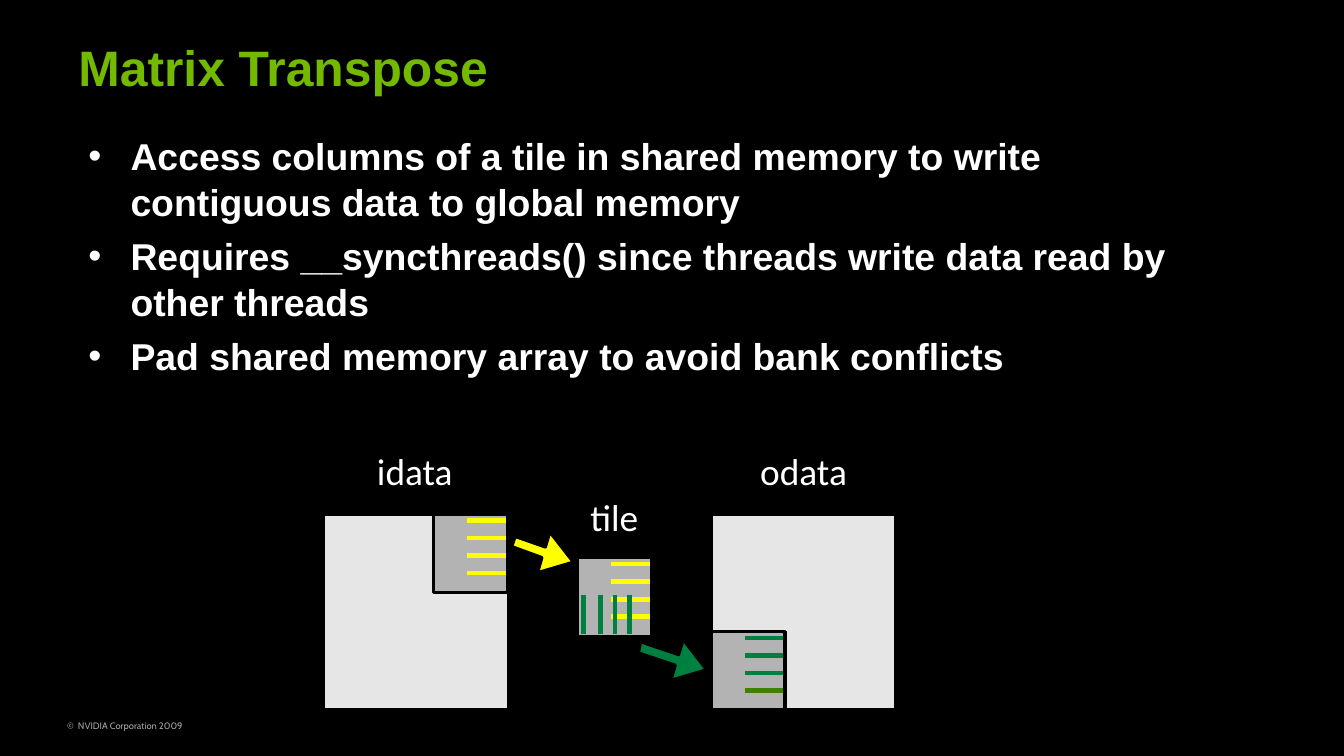
from dataclasses import dataclass

from lxml.etree import SubElement
from pptx import Presentation
from pptx.dml.color import RGBColor
from pptx.enum.shapes import MSO_CONNECTOR, MSO_SHAPE
from pptx.enum.text import MSO_ANCHOR, MSO_AUTO_SIZE, PP_ALIGN
from pptx.oxml.ns import qn
from pptx.util import Pt


@dataclass(frozen=True)
class Theme:
    background: RGBColor = RGBColor.from_string("000000")
    title: RGBColor = RGBColor.from_string("73B900")
    text: RGBColor = RGBColor.from_string("FFFFFF")
    footer: RGBColor = RGBColor.from_string("A6A6A6")
    matrix: RGBColor = RGBColor.from_string("E6E6E6")
    tile: RGBColor = RGBColor.from_string("B3B3B3")
    yellow: RGBColor = RGBColor.from_string("FFFF00")
    green: RGBColor = RGBColor.from_string("008040")
    olive: RGBColor = RGBColor.from_string("408000")
    title_size: int = 32
    text_size: int = 24
    footer_size: int = 6
    outline: int = 2
    stripe: int = 3


theme = Theme()
deck = Presentation()
deck.slide_width, deck.slide_height = Pt(864), Pt(486)
slide = deck.slides.add_slide(deck.slide_layouts[1])
slide.background.fill.solid()
slide.background.fill.fore_color.rgb = theme.background
shapes = slide.shapes


def fill_text(box, bounds, lines, insets, frame_format, para_format, font_format, color):
    box.left, box.top, box.width, box.height = [Pt(value) for value in bounds]
    frame = box.text_frame
    sides = ("margin_left", "margin_top", "margin_right", "margin_bottom")
    frame_values = {"word_wrap": True, "auto_size": MSO_AUTO_SIZE.NONE}
    frame_values |= dict(zip(sides, [Pt(value) for value in insets])) | frame_format
    for name, value in frame_values.items():
        setattr(frame, name, value)
    for index, line in enumerate(lines):
        para = frame.paragraphs[0] if index == 0 else frame.add_paragraph()
        for name, value in para_format.items():
            setattr(para, name, value)
        para.space_before = Pt(5.5 if index else 0)
        span = para.add_run()
        span.text = line
        for name, value in font_format.items():
            setattr(span.font, name, value)
        span.font.color.rgb = color


def style_shape(shape, color):
    shape.shadow.inherit = False
    shape.fill.solid()
    shape.fill.fore_color.rgb = color
    shape.line.color.rgb = theme.background
    shape.line.width = Pt(theme.outline)


fill_text(
    shapes.add_textbox(0, 0, 0, 0), (36, 459.4, 162, 14.4),
    ["©  NVIDIA Corporation 2009"], (7.2, 3.6, 7.2, 3.6), {}, {},
    {"name": "Cabin", "size": Pt(theme.footer_size)}, theme.footer,
)
fill_text(
    shapes.title, (43.2, 20.4, 725, 45.4),
    ["Matrix Transpose"], (7.2, 3.6, 7.2, 3.6),
    {"vertical_anchor": MSO_ANCHOR.BOTTOM}, {"alignment": PP_ALIGN.LEFT},
    {"name": "Arial", "size": Pt(theme.title_size), "bold": True}, theme.title,
)
fill_text(
    slide.placeholders[1], (49.7, 80, 742.3, 164),
    [
        "Access columns of a tile in shared memory to write contiguous data to global memory",
        "Requires __syncthreads() since threads write data read by other threads",
        "Pad shared memory array to avoid bank conflicts",
    ],
    (7.2, 5, 10, 3.6), {"vertical_anchor": MSO_ANCHOR.TOP}, {"line_spacing": 1.02},
    {"name": "Arial", "size": Pt(theme.text_size), "bold": True}, theme.text,
)

for label, bounds in [
    ("idata", (235.4, 281.5, 62.6, 42.5)),
    ("odata", (480.2, 281.5, 72.7, 42.5)),
    ("tile", (373, 310.3, 43.9, 43.2)),
]:
    fill_text(
        shapes.add_textbox(0, 0, 0, 0), bounds, [label], (2.9, 2.9, 2.9, 2.9),
        {"vertical_anchor": MSO_ANCHOR.MIDDLE}, {"alignment": PP_ALIGN.CENTER},
        {"name": "Calibri", "size": Pt(theme.text_size)}, theme.text,
    )

matrix_top, matrix_width, matrix_height = 330.5, 118.8, 126
tile_width, tile_height = 47.5, 50.4
idata_left, tile_left, odata_left = 208, 371.5, 457.2
tile_top = 358.6
idata_tile = (idata_left + matrix_width - tile_width - 0.5, matrix_top)
shared_tile = (tile_left, tile_top)
odata_tile = (odata_left, matrix_top + matrix_height - tile_height)

squares = [
    (left, matrix_top, matrix_width, matrix_height, theme.matrix)
    for left in (idata_left, odata_left)
]
squares += [
    (left, top, tile_width, tile_height, theme.tile)
    for left, top in (idata_tile, shared_tile, odata_tile)
]
for left, top, width, height, color in squares:
    square = shapes.add_shape(MSO_SHAPE.RECTANGLE, Pt(left), Pt(top), Pt(width), Pt(height))
    style_shape(square, color)

stripes = []
for (left, top), colors in [
    (idata_tile, [theme.yellow] * 4),
    (shared_tile, [theme.yellow] * 4),
    (odata_tile, [theme.green] * 3 + [theme.olive]),
]:
    for row, color in enumerate(colors):
        y = top + 4 + 11.3 * row
        stripes.append((left + 21.6, y, left + 46.4, y, color))
for offset in (3.6, 14.4, 23.8, 33.1):
    x = tile_left + offset
    stripes.append((x, tile_top + 23.8, x, tile_top + 49, theme.green))

for *ends, color in stripes:
    stripe = shapes.add_connector(MSO_CONNECTOR.STRAIGHT, *[Pt(value) for value in ends])
    stripe.line.color.rgb = color
    stripe.line.width = Pt(theme.stripe)
    SubElement(stripe._element.spPr, qn("a:effectLst"))

arrow_head = [(-18, -9.7), (-15.1, -19.4), (0, 0), (-23, 6.8), (-20.2, -2.9)]
for (tip_x, tip_y), tail, color in [
    ((454.3, 430.6), [(-42.5, -18), (-43.9, -10.8)], theme.green),
    ((368.6, 361.4), [(-37.4, -16.5), (-39.6, -10)], theme.yellow),
]:
    points = [
        (Pt(tip_x + dx), Pt(tip_y + dy)) for dx, dy in [tail[0], *arrow_head, tail[1]]
    ]
    builder = shapes.build_freeform(*points[0])
    builder.add_line_segments(points[1:], close=True)
    style_shape(builder.convert_to_shape(), color)

deck.save("out.pptx")
